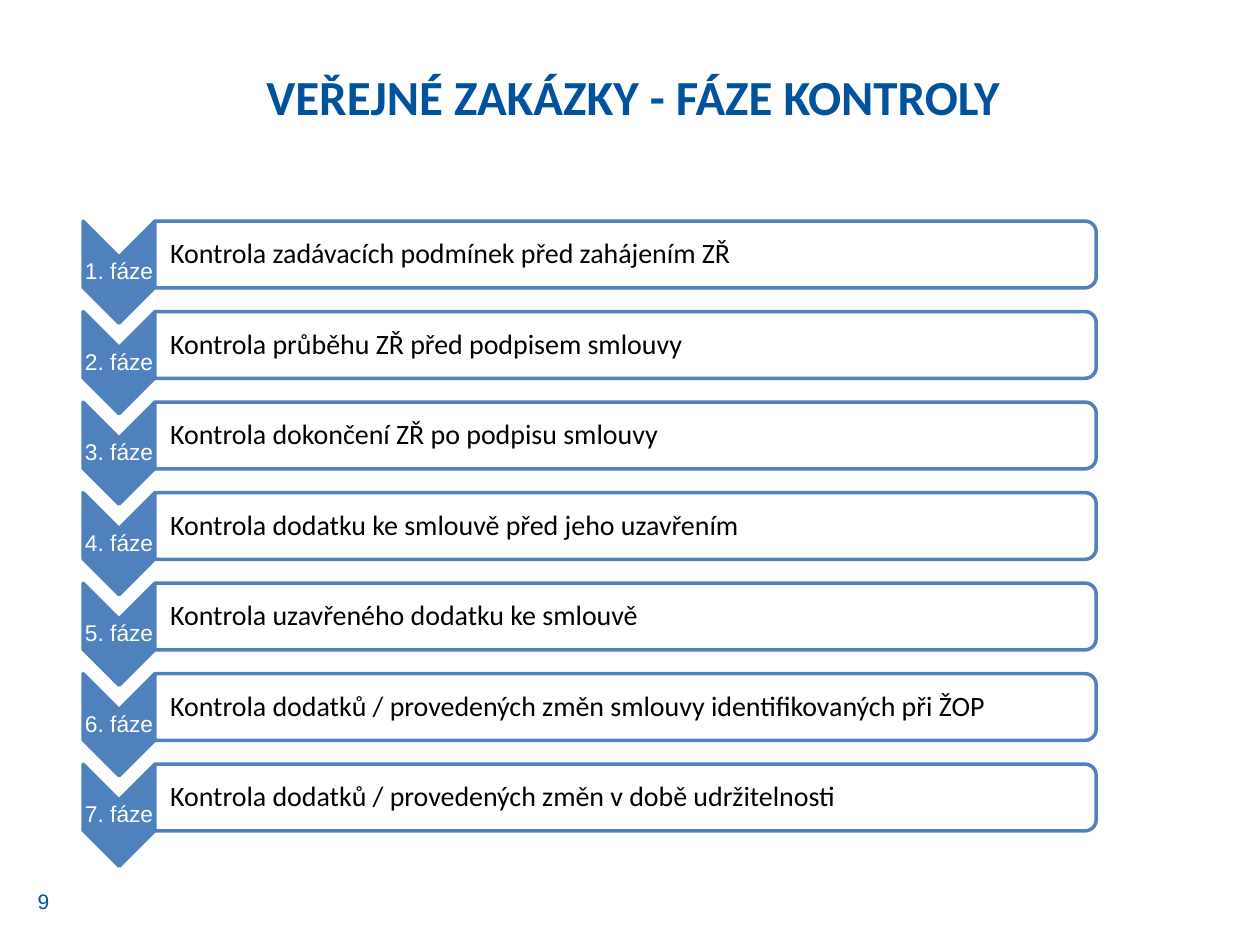
from pptx import Presentation, util as u
from pptx.dml.color import RGBColor
from pptx.enum import shapes, text

NAVY, BLUE, WHITE, BLACK = "00529C", "4F81BD", "FFFFFF", "000000"
PHASES = [
    "Kontrola zadávacích podmínek před zahájením ZŘ",
    "Kontrola průběhu ZŘ před podpisem smlouvy",
    "Kontrola dokončení ZŘ po podpisu smlouvy",
    "Kontrola dodatku ke smlouvě před jeho uzavřením",
    "Kontrola uzavřeného dodatku ke smlouvě",
    "Kontrola dodatků / provedených změn smlouvy identifikovaných při ŽOP",
    "Kontrola dodatků / provedených změn v době udržitelnosti",
]

presentation = Presentation()
presentation.slide_width, presentation.slide_height = u.Inches(10), u.Inches(7.5)
slide = presentation.slides.add_slide(presentation.slide_layouts[6])


def add_text(words, left, top, width, height, size, font, color, align="LEFT",
             bold=False, anchor="MIDDLE", insets=(0.1, 0.05), spacing=1, wrap=True):
    box = slide.shapes.add_textbox(*map(u.Inches, (left, top, width, height)))
    frame = box.text_frame
    frame.word_wrap = wrap
    frame.vertical_anchor = text.MSO_ANCHOR[anchor]
    frame.margin_left = u.Inches(insets[0])
    frame.margin_right = frame.margin_top = frame.margin_bottom = u.Inches(insets[1])
    paragraph = frame.paragraphs[0]
    paragraph.text = words
    paragraph.alignment = text.PP_ALIGN[align]
    paragraph.line_spacing = spacing
    paragraph.font.size, paragraph.font.name = u.Pt(size), font
    paragraph.font.bold = bold
    paragraph.font.color.rgb = RGBColor.from_string(color)


def add_turned(kind, center_x, center_y, length, thickness, fill):
    """Place a shape by its centre and turn it a quarter clockwise."""
    shape = slide.shapes.add_shape(
        shapes.MSO_SHAPE[kind],
        u.Inches(center_x - length / 2), u.Inches(center_y - thickness / 2),
        u.Inches(length), u.Inches(thickness))
    shape.rotation = 90
    shape.shadow.inherit = False
    shape.fill.solid()
    shape.fill.fore_color.rgb = RGBColor.from_string(fill)
    shape.line.color.rgb = RGBColor.from_string(BLUE)
    shape.line.width = u.Pt(2)


# Page number and title
add_text("9", 0.2, 6.95, 0.55, 0.4, 12, "Arial", NAVY)
add_text("VEŘEJNÉ ZAKÁZKY - FÁZE KONTROLY", 0, 0.48, 10, 0.83, 28, "Calibri", NAVY,
         "CENTER", bold=True, anchor="TOP")

# Phase grid: a chevron column, then a bar column
first_row, last_row = 2.02, 6.33
row_pitch = (last_row - first_row) / (len(PHASES) - 1)
chevron_left, chevron_width, chevron_height = 0.66, 0.57, 0.81
chevron_drop = 0.14
bar_left, bar_width, bar_height = 1.23, 7.47, 0.53

for index, phase in enumerate(PHASES):
    bar_y = first_row + index * row_pitch
    chevron_y = bar_y + chevron_drop

    # Chevron with the phase number
    add_turned("CHEVRON", chevron_left + chevron_width / 2, chevron_y,
               chevron_height, chevron_width, BLUE)
    add_text(f"{index + 1}. fáze", chevron_left, chevron_y - 0.12, chevron_width, 0.24,
             13, "Arial", WHITE, "CENTER", insets=(0.01, 0.01), spacing=0.9, wrap=False)

    # Bar with the description
    add_turned("ROUND_2_SAME_RECTANGLE", bar_left + bar_width / 2, bar_y,
               bar_height, bar_width, WHITE)
    add_text(phase, bar_left, bar_y - 0.24, 7.45, 0.48, 16, "Calibri", BLACK,
             insets=(0.12, 0.01), spacing=0.9)

presentation.save("out.pptx")
